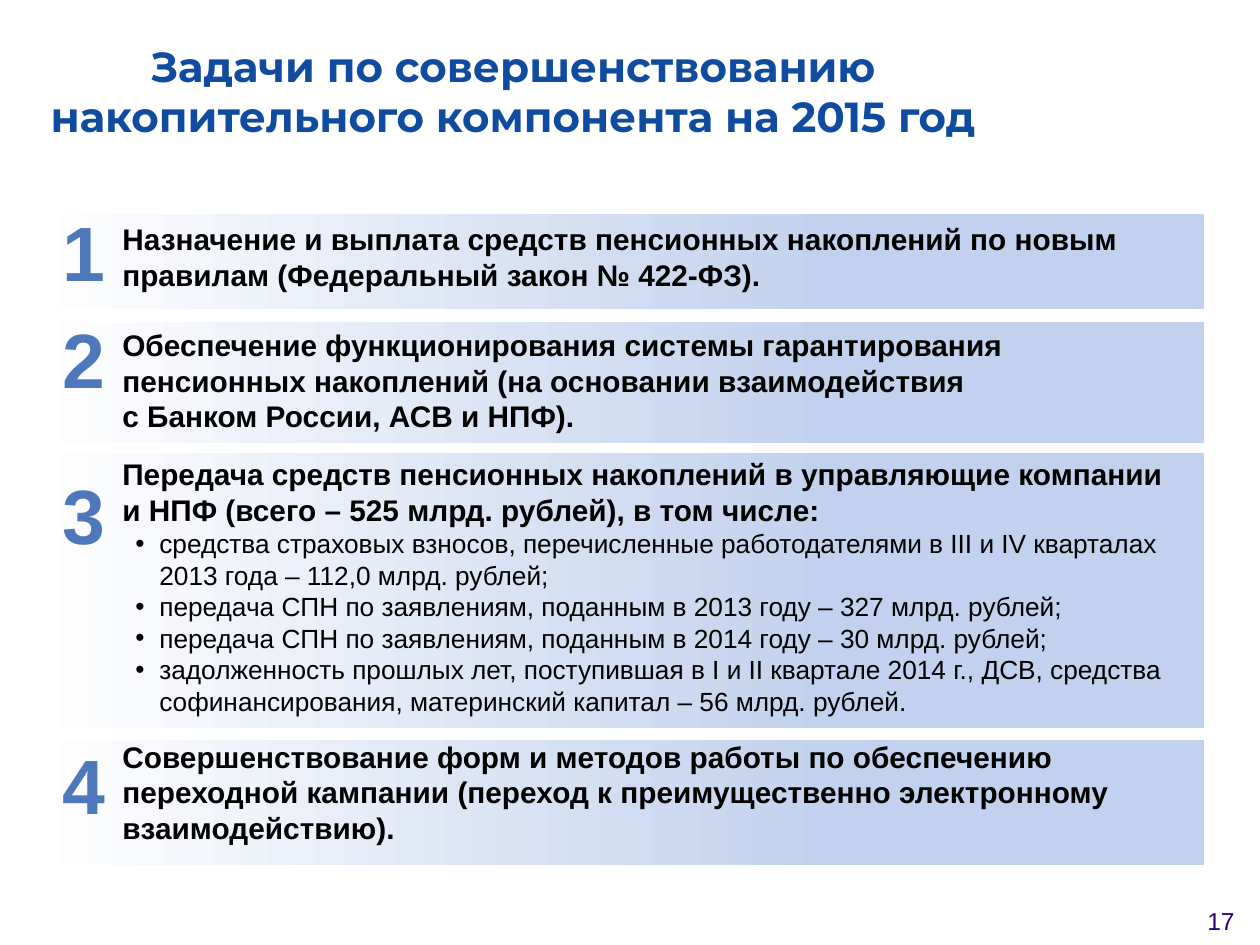
from lxml.etree import SubElement
from pptx import Presentation
from pptx.dml.color import RGBColor
from pptx.enum.shapes import MSO_SHAPE
from pptx.enum.text import MSO_ANCHOR, MSO_AUTO_SIZE, PP_ALIGN
from pptx.oxml.ns import qn
from pptx.util import Emu, Pt

PX_PER_INCH = 126
COLORS = {
    "title": "0F4B9F",
    "band": "C2D1ED",
    "fade": "FFFFFF",
    "number": "4D79BC",
    "text": "000000",
    "page": "2B0083",
}
BANDS = [
    {"number": "1", "top": 214, "height": 95, "number_top": 198},
    {"number": "2", "top": 322, "height": 121, "number_top": 305},
    {"number": "3", "top": 453, "height": 275, "number_top": 461},
    {"number": "4", "top": 740, "height": 125, "number_top": 731},
]
TASKS = [
    {
        "lines": ["Назначение и выплата средств пенсионных накоплений по новым правилам "
                  "(Федеральный закон № 422-ФЗ)."],
        "gap": 0,
    },
    {
        "lines": ["Обеспечение функционирования системы гарантирования пенсионных накоплений "
                  "(на основании взаимодействия",
                  "с Банком России, АСВ и НПФ)."],
        "gap": 19.5,
    },
    {
        "lines": ["Передача средств пенсионных накоплений в управляющие компании",
                  "и НПФ (всего – 525 млрд. рублей), в том числе:"],
        "gap": 12.6,
        "bullets": [
            "средства страховых взносов, перечисленные работодателями в III и IV кварталах "
            "2013 года – 112,0 млрд. рублей;",
            "передача СПН по заявлениям, поданным в 2013 году – 327 млрд. рублей;",
            "передача СПН по заявлениям, поданным в 2014 году – 30 млрд. рублей;",
            "задолженность прошлых лет, поступившая в I и II квартале 2014 г., ДСВ, средства "
            "софинансирования, материнский капитал – 56 млрд. рублей.",
        ],
    },
    {
        "lines": ["Совершенствование форм и методов работы по обеспечению переходной кампании "
                  "(переход к преимущественно электронному взаимодействию)."],
        "gap": 12.6,
    },
]


def px(length):
    """Turn whole pixels into EMU."""
    return Emu(round(length * 914400 / PX_PER_INCH))


def color(name):
    """Look up a named colour."""
    return RGBColor.from_string(COLORS[name])


def add_run(paragraph, text, size, color_name, bold=False, font_name="Arial"):
    """Append one formatted run."""
    run = paragraph.add_run()
    run.text = text
    run.font.name = font_name
    run.font.size = Pt(size)
    run.font.bold = bold
    run.font.color.rgb = color(color_name)


def add_text_box(slide, left, top, width, height):
    """Add a wrapping text box and return its text frame."""
    box = slide.shapes.add_textbox(px(left), px(top), px(width), px(height))
    box.text_frame.word_wrap = True
    return box.text_frame


def add_title(slide, text):
    """Place and format the title placeholder."""
    title = slide.shapes.title
    title.left, title.top, title.width, title.height = px(14), px(33), px(998), px(115)
    frame = title.text_frame
    frame.auto_size = MSO_AUTO_SIZE.NONE
    frame.vertical_anchor = MSO_ANCHOR.MIDDLE
    paragraph = frame.paragraphs[0]
    paragraph.alignment = PP_ALIGN.CENTER
    add_run(paragraph, text, 24, "title", True, "Montserrat")


def add_band(slide, top, height):
    """Add a band that fades out to the left."""
    band = slide.shapes.add_shape(MSO_SHAPE.RECTANGLE, px(35), px(top), px(1169), px(height))
    band.shadow.inherit = False
    band.line.fill.background()
    band.fill.gradient()
    band.fill.gradient_angle = 180
    stops = [(0.32, "band"), (1, "fade")]
    for stop, (position, color_name) in zip(band.fill.gradient_stops, stops):
        stop.position = position
        stop.color.rgb = color(color_name)


def add_number(slide, number, top):
    """Add the large number of a task."""
    frame = add_text_box(slide, 50, top, 60, 106)
    frame.margin_right = 0
    add_run(frame.paragraphs[0], number, 44, "number", True)


def add_bullet(frame, text):
    """Add one bulleted paragraph."""
    paragraph = frame.add_paragraph()
    properties = paragraph._p.get_or_add_pPr()
    properties.set("marL", str(px(37)))
    properties.set("indent", str(-px(24)))
    SubElement(properties, qn("a:buFont"), typeface="Arial")
    SubElement(properties, qn("a:buChar"), char="•")
    add_run(paragraph, text, 15, "text")


def add_tasks(slide):
    """Add the task texts in one flowing box."""
    frame = add_text_box(slide, 110, 215, 1094, 683)
    for index, task in enumerate(TASKS):
        paragraph = frame.add_paragraph() if index else frame.paragraphs[0]
        if task["gap"]:
            paragraph.space_before = Pt(task["gap"])
        for line_index, line in enumerate(task["lines"]):
            if line_index:
                paragraph.add_line_break()
            add_run(paragraph, line, 17, "text", True)
        for bullet in task.get("bullets", []):
            add_bullet(frame, bullet)


def add_page_number(slide, number):
    """Add the page number in the corner."""
    paragraph = add_text_box(slide, 1186, 900, 70, 45).paragraphs[0]
    paragraph.alignment = PP_ALIGN.CENTER
    add_run(paragraph, number, 14, "page")


def main():
    """Build and save the slide."""
    presentation = Presentation()
    presentation.slide_width, presentation.slide_height = px(1260), px(945)
    slide = presentation.slides.add_slide(presentation.slide_layouts[5])
    add_title(slide, "Задачи по совершенствованию накопительного компонента на 2015 год")
    for band in BANDS:
        add_band(slide, band["top"], band["height"])
    for band in BANDS:
        add_number(slide, band["number"], band["number_top"])
    add_tasks(slide)
    add_page_number(slide, "17")
    presentation.save("out.pptx")


if __name__ == "__main__":
    main()
